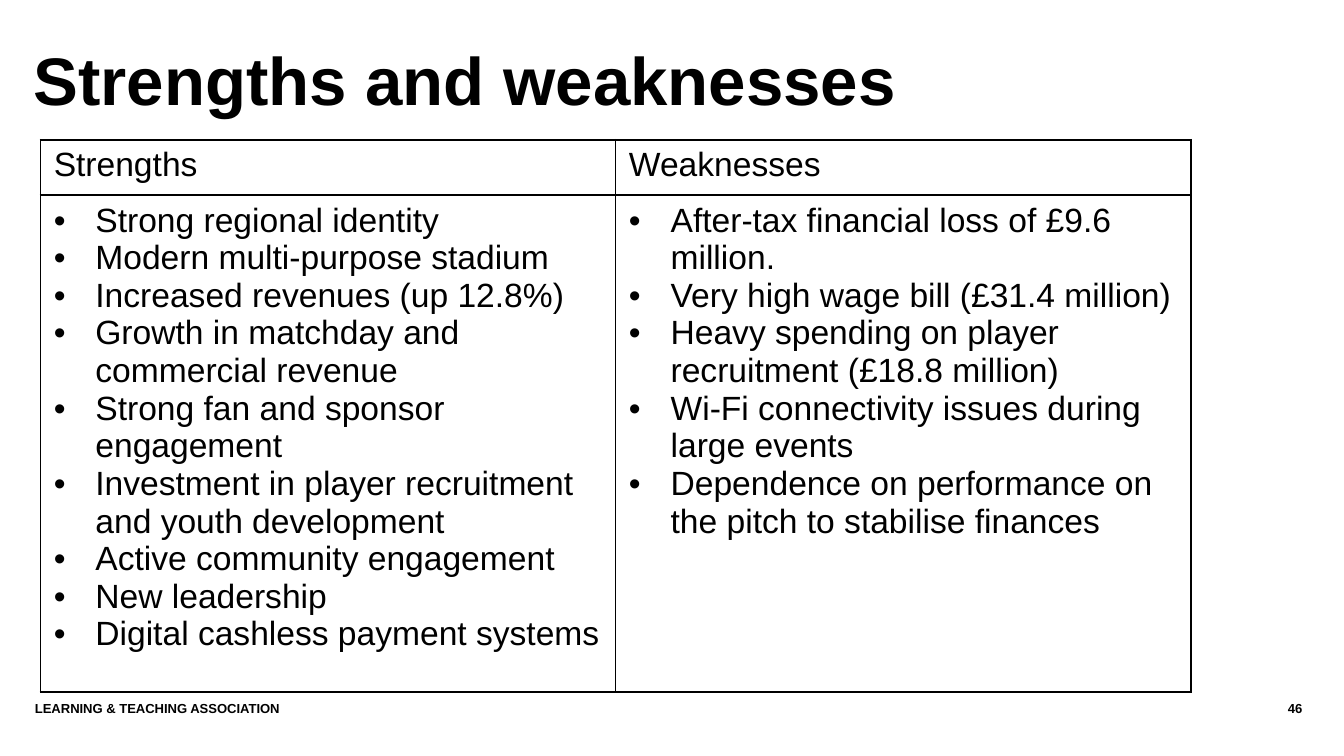
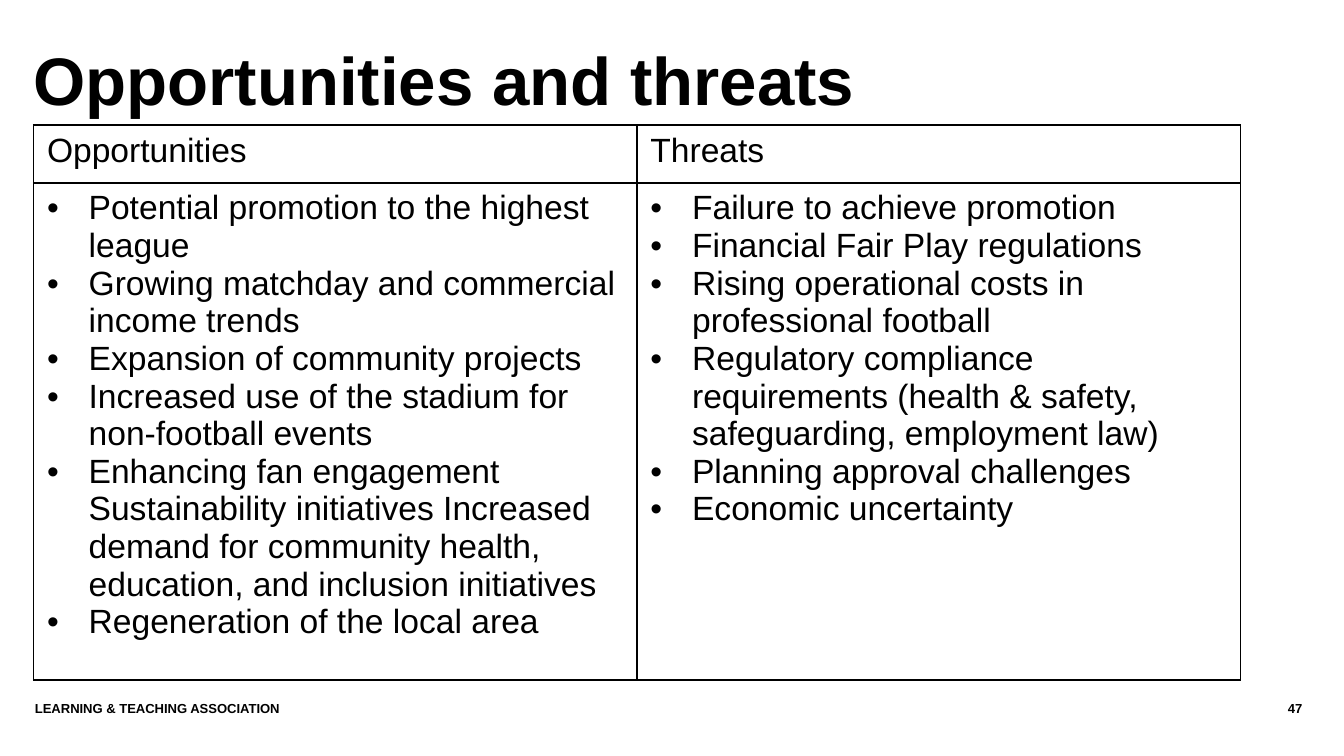
from lxml import etree
from pptx import Presentation
from pptx.dml.color import RGBColor
from pptx.enum.text import MSO_ANCHOR, PP_ALIGN
from pptx.oxml.ns import qn
from pptx.util import Inches, Pt

LEFT = PP_ALIGN.LEFT
RIGHT = PP_ALIGN.RIGHT
TOP = MSO_ANCHOR.TOP
MIDDLE = MSO_ANCHOR.MIDDLE

COLORS = {"text": "000000", "border": "000000", "background": "FFFFFF"}
FONT = "Arial"
FOOTER = "LEARNING & TEACHING ASSOCIATION"
TITLE_BOX = (0.25, 0.27, 9.23, 0.76)
FOOTER_BOX = (0.26, 5.21, 8.41, 0.3)
NUMBER_BOX = (8.7, 5.21, 0.99, 0.3)
BULLET_INDENT = 0.31

SLIDES = [
    {
        "title": "Strengths and weaknesses",
        "number": 46,
        "table_box": (0.3, 1.04, 8.56, 4.11),
        "row_heights": (0.41, 0.41),
        "columns": {
            "Strengths": [
                "Strong regional identity",
                "Modern multi-purpose stadium",
                "Increased revenues (up 12.8%)",
                "Growth in matchday and commercial revenue",
                "Strong fan and sponsor engagement",
                "Investment in player recruitment and youth development",
                "Active community engagement",
                "New leadership",
                "Digital cashless payment systems",
            ],
            "Weaknesses": [
                "After‑tax financial loss of £9.6 million.",
                "Very high wage bill (£31.4 million)",
                "Heavy spending on player recruitment (£18.8 million)",
                "Wi‑Fi connectivity issues during large events",
                "Dependence on performance on the pitch to stabilise finances",
            ],
        },
    },
    {
        "title": "Opportunities and threats",
        "number": 47,
        "table_box": (0.25, 0.93, 8.98, 4.13),
        "row_heights": (0.43, 3.68),
        "columns": {
            "Opportunities": [
                "Potential promotion to the highest league",
                "Growing matchday and commercial income trends",
                "Expansion of community projects",
                "Increased use of the stadium for non‑football events",
                "Enhancing fan engagement Sustainability initiatives Increased "
                "demand for community health, education, and inclusion initiatives",
                "Regeneration of the local area",
            ],
            "Threats": [
                "Failure to achieve promotion",
                "Financial Fair Play regulations",
                "Rising operational costs in professional football",
                "Regulatory compliance requirements (health & safety, "
                "safeguarding, employment law)",
                "Planning approval challenges",
                "Economic uncertainty",
            ],
        },
    },
]


def add_bullet(paragraph):
    properties = paragraph._p.get_or_add_pPr()
    properties.set("marL", str(Inches(BULLET_INDENT)))
    properties.set("indent", str(-Inches(BULLET_INDENT)))
    etree.SubElement(properties, qn("a:buFont"), typeface=FONT)
    etree.SubElement(properties, qn("a:buChar"), char="•")


def write_text(frame, lines, size=18, bold=False, align=LEFT, bullets=False, spacing=1.0):
    for index, line in enumerate(lines):
        paragraph = frame.add_paragraph() if index else frame.paragraphs[0]
        paragraph.alignment = align
        paragraph.line_spacing = spacing
        if bullets:
            add_bullet(paragraph)
        run = paragraph.add_run()
        run.text = line
        run.font.name = FONT
        run.font.size = Pt(size)
        run.font.bold = bold
        run.font.color.rgb = RGBColor.from_string(COLORS["text"])


def prepare_frame(frame, anchor):
    frame.word_wrap = True
    frame.vertical_anchor = anchor
    frame.margin_left = frame.margin_right = frame.margin_top = frame.margin_bottom = 0


def add_title(slide, text, box):
    title = slide.shapes.title
    title.left, title.top, title.width, title.height = map(Inches, box)
    prepare_frame(title.text_frame, MIDDLE)
    write_text(title.text_frame, [text], size=36, bold=True, spacing=0.75)


def add_footer_text(slide, text, box, align=LEFT):
    frame = slide.shapes.add_textbox(*map(Inches, box)).text_frame
    prepare_frame(frame, TOP)
    write_text(frame, [text], size=7, bold=True, align=align)


def format_cell(cell):
    properties = cell._tc.get_or_add_tcPr()
    for side in ("a:lnL", "a:lnR", "a:lnT", "a:lnB"):
        line = etree.SubElement(properties, qn(side), w=str(Pt(1)))
        fill = etree.SubElement(line, qn("a:solidFill"))
        etree.SubElement(fill, qn("a:srgbClr"), val=COLORS["border"])
    cell.fill.background()


def add_comparison(slide, columns, box, row_heights):
    left, top, width, height = map(Inches, box)
    graphic_frame = slide.shapes.add_table(len(row_heights), len(columns), left, top, width, height)
    table = graphic_frame.table
    table.first_row = table.horz_banding = False
    for row, row_height in zip(table.rows, row_heights):
        row.height = Inches(row_height)
    graphic_frame.height = height
    for index, (heading, points) in enumerate(columns.items()):
        header, body = table.cell(0, index), table.cell(1, index)
        format_cell(header)
        format_cell(body)
        write_text(header.text_frame, [heading])
        write_text(body.text_frame, points, bullets=True)


def add_analysis_slide(presentation, content):
    slide = presentation.slides.add_slide(presentation.slide_layouts[5])
    background = slide.background.fill
    background.solid()
    background.fore_color.rgb = RGBColor.from_string(COLORS["background"])
    add_title(slide, content["title"], TITLE_BOX)
    add_footer_text(slide, str(content["number"]), NUMBER_BOX, align=RIGHT)
    add_footer_text(slide, FOOTER, FOOTER_BOX)
    add_comparison(slide, content["columns"], content["table_box"], content["row_heights"])


def main():
    presentation = Presentation()
    presentation.slide_width = Inches(10)
    presentation.slide_height = Inches(10) * 9 // 16
    for content in SLIDES:
        add_analysis_slide(presentation, content)
    presentation.save("out.pptx")


if __name__ == "__main__":
    main()
